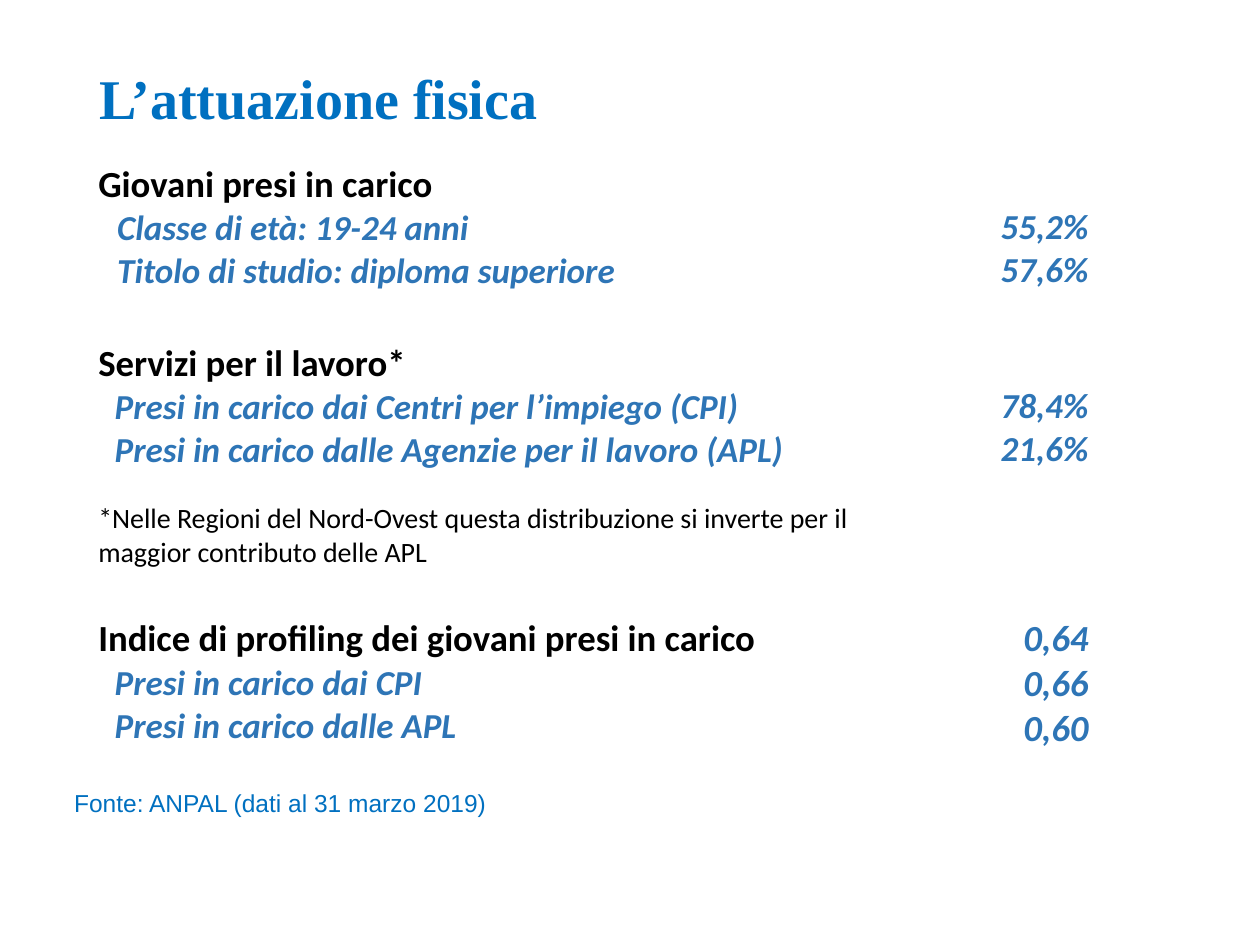
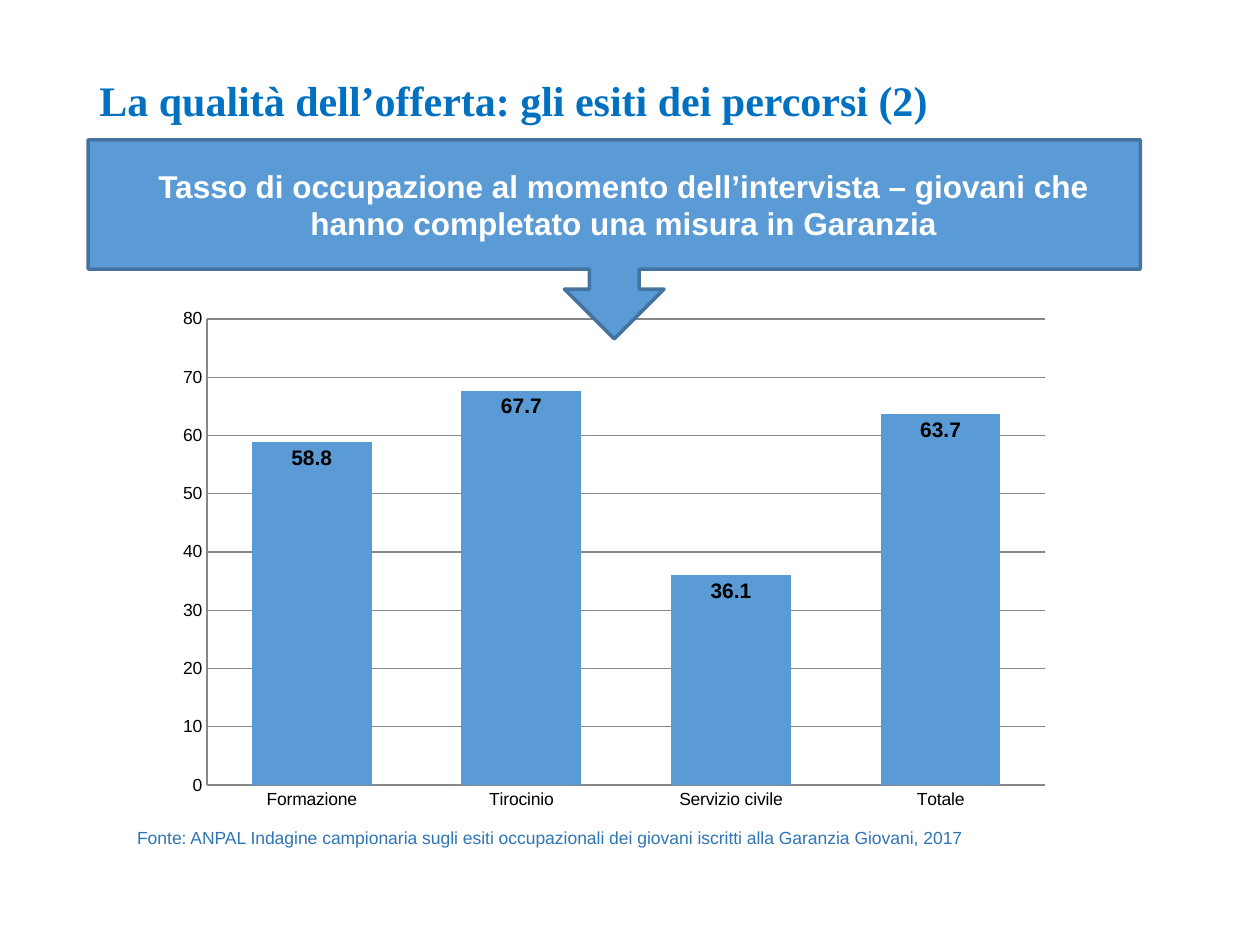
from pptx import Presentation
from pptx.chart.data import CategoryChartData
from pptx.dml.color import RGBColor
from pptx.enum.chart import XL_CHART_TYPE, XL_LABEL_POSITION, XL_TICK_MARK
from pptx.enum.shapes import MSO_SHAPE
from pptx.enum.text import MSO_ANCHOR, PP_ALIGN
from pptx.util import Inches, Pt


class Theme:
    title = RGBColor.from_string("0070C0")
    accent = RGBColor.from_string("2E75B6")
    fill = RGBColor.from_string("5B9BD5")
    edge = RGBColor.from_string("43739E")
    grid = RGBColor.from_string("878787")
    black = RGBColor.from_string("000000")
    white = RGBColor.from_string("FFFFFF")
    serif, sans, body = "Times New Roman", "Arial", "Calibri"
    heading, item, note, callout = 21, 20, 16, 18
    source, label, axis = 14, 12, 10
    plain_table = "{2D5ABB26-0587-4C30-8999-92F81FD0307C}"


prs = Presentation()
prs.slide_width, prs.slide_height = Inches(10), Inches(7.5)
COL, ROW = prs.slide_width / 100, prs.slide_height / 100


def place(x, y, w, h):
    return int(x * COL), int(y * ROW), int(w * COL), int(h * ROW)


def write(tf, text, font=Theme.body, size=Theme.item, color=Theme.accent, bold=False,
          italic=False, align=PP_ALIGN.LEFT, indent=0, before=0, spacing=1.0):
    p = tf.paragraphs[0] if not tf.text else tf.add_paragraph()
    if indent:
        p._p.get_or_add_pPr().set("marL", str(Inches(indent)))
    p.alignment, p.line_spacing, p.space_before = align, spacing, Pt(before)
    r = p.add_run()
    r.text = text
    f = r.font
    f.name, f.size, f.bold, f.italic = font, Pt(size), bold, italic
    f.color.rgb = color


titles = [("L’attuazione fisica", 32, 10.8),
          ("La qualità dell’offerta: gli esiti dei percorsi (2)", 24, 11.2)]
sources = [("Fonte: ANPAL (dati al 31 marzo 2019)",
            (4.9, 82.7, 38, 4.53), Theme.source, Theme.title),
           ("Fonte: ANPAL Indagine campionaria sugli esiti occupazionali dei giovani "
            "iscritti alla Garanzia Giovani, 2017",
            (9.9, 86.85, 71.6, 3.6), Theme.axis, Theme.accent)]

slides = []
for title, size, height in titles:
    s = prs.slides.add_slide(prs.slide_layouts[6])
    slides.append(s)
    tf = s.shapes.add_textbox(*place(6.9, 5.33, 86.2, height)).text_frame
    tf.word_wrap, tf.vertical_anchor = True, MSO_ANCHOR.MIDDLE
    write(tf, title, font=Theme.serif, size=size, color=Theme.title, bold=True, spacing=0.9)

groups = [
    ("Giovani presi in carico", 0.15,
     ["Classe di età: 19-24 anni", "Titolo di studio: diploma superiore"],
     ["55,2%", "57,6%"], 18.93),
    ("Servizi per il lavoro*", 0.13,
     ["Presi in carico dai Centri per l’impiego (CPI)",
      "Presi in carico dalle Agenzie per il lavoro (APL)"],
     ["78,4%", "21,6%"], 29.15),
    ("Indice di profiling dei giovani presi in carico", 0.13,
     ["Presi in carico dai CPI", "Presi in carico dalle APL"],
     ["0,64", "0,66", "0,60"], 20.27),
]
footnote = ("*Nelle Regioni del Nord-Ovest questa distribuzione si inverte per il "
            "maggior contributo delle APL")

table = slides[0].shapes.add_table(len(groups), 2, *place(6.8, 16.53, 80.6, 68.35)).table
table.first_row = table.horz_banding = False
table._tbl.tblPr[0].text = Theme.plain_table
for column, share in zip(table.columns, (64.7, 15.9)):
    column.width = int(share * COL)
for i, (heading, indent, items, values, height) in enumerate(groups):
    table.rows[i].height = int(height * ROW)
    names, figures = table.cell(i, 0), table.cell(i, 1)
    for cell in (names, figures):
        cell.fill.background()
    write(names.text_frame, heading, size=Theme.heading, color=Theme.black, bold=True)
    for item in items:
        write(names.text_frame, item, bold=True, italic=True, indent=indent)
    has_total = len(values) > len(items)
    if not has_total:
        figures.margin_top = Inches(0.4)
    for value in values:
        write(figures.text_frame, value, size=Theme.heading if has_total else Theme.item,
              bold=True, italic=True, align=PP_ALIGN.RIGHT)
write(table.cell(1, 0).text_frame, footnote, size=Theme.note, color=Theme.black, before=17)

data = CategoryChartData(number_format="0.0")
data.categories = ["Formazione", "Tirocinio", "Servizio civile", "Totale"]
data.add_series("Series 1", (58.8, 67.7, 36.1, 63.7))
chart = slides[1].shapes.add_chart(XL_CHART_TYPE.COLUMN_CLUSTERED,
                                   *place(13.1, 31.6, 71.3, 55.2), data).chart
chart.has_legend = chart.has_title = False
chart.font.name, chart.font.size = Theme.sans, Pt(Theme.axis)
chart.font.color.rgb = Theme.black
for axis in (chart.category_axis, chart.value_axis):
    axis.major_tick_mark = axis.minor_tick_mark = XL_TICK_MARK.NONE
    axis.format.line.color.rgb = Theme.grid
axis = chart.value_axis
axis.minimum_scale, axis.maximum_scale, axis.major_unit = 0, 80, 10
axis.tick_labels.number_format, axis.tick_labels.number_format_is_linked = "0", False
axis.major_gridlines.format.line.color.rgb = Theme.grid

plot = chart.plots[0]
plot.gap_width, plot.overlap, plot.vary_by_categories = 75, 40, False
fill = plot.series[0].format.fill
fill.solid()
fill.fore_color.rgb = Theme.fill
plot.has_data_labels = True
labels = plot.data_labels
labels.show_value, labels.position = True, XL_LABEL_POSITION.INSIDE_END
labels.font.name, labels.font.size, labels.font.bold = Theme.sans, Pt(Theme.label), True
labels.font.color.rgb = Theme.black

sp = slides[1].shapes.add_shape(MSO_SHAPE.DOWN_ARROW_CALLOUT, *place(7, 14.8, 83.5, 21.07))
sp.shadow.inherit = False
sp.fill.solid()
sp.fill.fore_color.rgb = Theme.fill
sp.line.color.rgb, sp.line.width = Theme.edge, Pt(2)
tf = sp.text_frame
tf.word_wrap, tf.vertical_anchor = True, MSO_ANCHOR.MIDDLE
write(tf, "Tasso di occupazione al momento dell’intervista – giovani che hanno completato "
      "una misura in Garanzia", font=Theme.sans, size=Theme.callout, color=Theme.white,
      bold=True, align=PP_ALIGN.CENTER, indent=0.15)

for s, (source, box, size, color) in zip(slides, sources):
    tf = s.shapes.add_textbox(*place(*box)).text_frame
    tf.word_wrap = True
    write(tf, source, font=Theme.sans, size=size, color=color)

prs.save("out.pptx")
